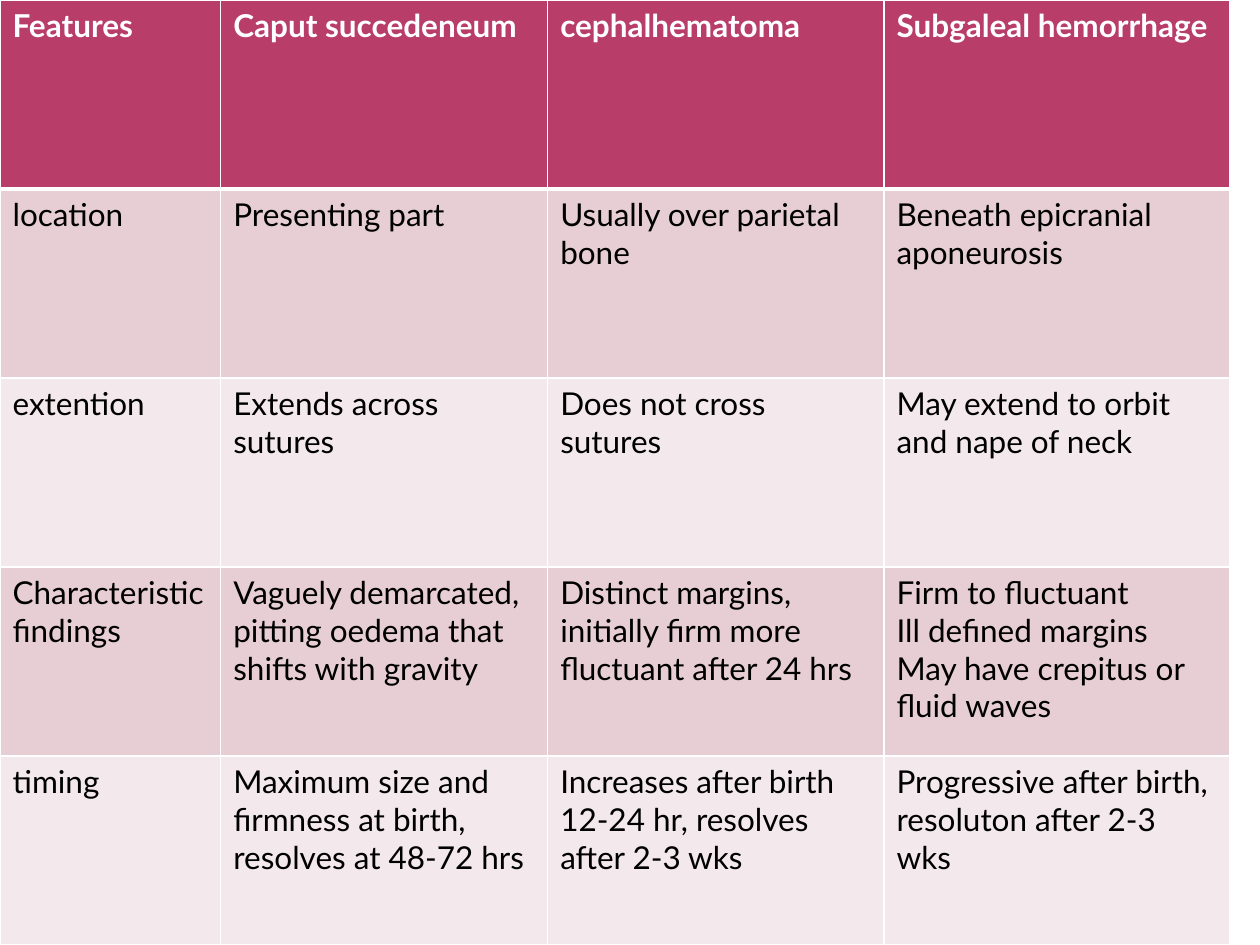
from dataclasses import dataclass

from lxml.etree import SubElement
from pptx import Presentation
from pptx.dml.color import RGBColor as Rgb
from pptx.oxml.ns import qn
from pptx.util import Cm, Pt


@dataclass(frozen=True)
class Theme:
    font: str = "Lato"
    text_size: float = 18
    header_fill: str = "B83D68"
    header_text: str = "FFFFFF"
    body_text: str = "000000"
    band_fills: tuple = ("E6CED4", "F3E8EB")
    rule_color: str = "FFFFFF"
    rule: float = 1
    header_rule: float = 3


THEME = Theme()
COLUMN_WIDTHS = (4.45, 6.59, 6.78, 6.98)
ROW_HEIGHT = 3.81

# One row per feature, one column per type of swelling
COMPARISON = (
    ("Features", "Caput succedeneum", "cephalhematoma", "Subgaleal hemorrhage"),
    ("location", "Presenting part", "Usually over parietal bone",
     "Beneath epicranial aponeurosis"),
    ("extention", "Extends across sutures", "Does not cross sutures",
     "May extend to orbit and nape of neck"),
    ("Characteristic findings",
     "Vaguely demarcated, pitting oedema that shifts with gravity",
     "Distinct margins, initially firm more fluctuant after 24 hrs",
     "Firm to fluctuant\nIll defined margins\nMay have crepitus or fluid waves"),
    ("timing", "Maximum size and firmness at birth, resolves at 48-72 hrs",
     "Increases after birth 12-24 hr, resolves after 2-3 wks",
     "Progressive after birth, resoluton after 2-3 wks"),
)


def draw_borders(cell, top, bottom):
    """Rule all four sides; call before filling, as the schema orders them so."""
    properties = cell._tc.get_or_add_tcPr()
    widths = {"lnL": THEME.rule, "lnR": THEME.rule, "lnT": top, "lnB": bottom}
    for side, width in widths.items():
        line = SubElement(properties, qn(f"a:{side}"), w=str(Pt(width)))
        solid = SubElement(line, qn("a:solidFill"))
        SubElement(solid, qn("a:srgbClr"), val=THEME.rule_color)


def fill_cell(cell, fill):
    cell.fill.solid()
    cell.fill.fore_color.rgb = Rgb.from_string(fill)


def write_cell(cell, text, color, bold):
    cell.text_frame.text = text
    for paragraph in cell.text_frame.paragraphs:
        for run in paragraph.runs:
            run.font.name = THEME.font
            run.font.size = Pt(THEME.text_size)
            run.font.bold = bold
            run.font.color.rgb = Rgb.from_string(color)


def add_comparison(slide):
    frame = slide.shapes.add_table(
        len(COMPARISON), len(COLUMN_WIDTHS), 0, 0,
        Cm(sum(COLUMN_WIDTHS)), Cm(ROW_HEIGHT * len(COMPARISON)))
    comparison = frame.table
    for column, width in zip(comparison.columns, COLUMN_WIDTHS):
        column.width = Cm(width)

    for index, (row, texts) in enumerate(zip(comparison.rows, COMPARISON)):
        row.height = Cm(ROW_HEIGHT)
        is_header = index == 0
        fill = THEME.header_fill if is_header else THEME.band_fills[(index - 1) % 2]
        color = THEME.header_text if is_header else THEME.body_text
        # The header's heavy rule is shared with the first body row
        top = THEME.header_rule if index == 1 else THEME.rule
        bottom = THEME.header_rule if is_header else THEME.rule
        for cell, text in zip(row.cells, texts):
            draw_borders(cell, top, bottom)
            fill_cell(cell, fill)
            write_cell(cell, text, color, is_header)


def main():
    deck = Presentation()
    deck.slide_width, deck.slide_height = Cm(25.4), Cm(19.05)
    # Blank layout: the table takes the whole slide and there is no title
    add_comparison(deck.slides.add_slide(deck.slide_layouts[6]))
    deck.save("out.pptx")


if __name__ == "__main__":
    main()
